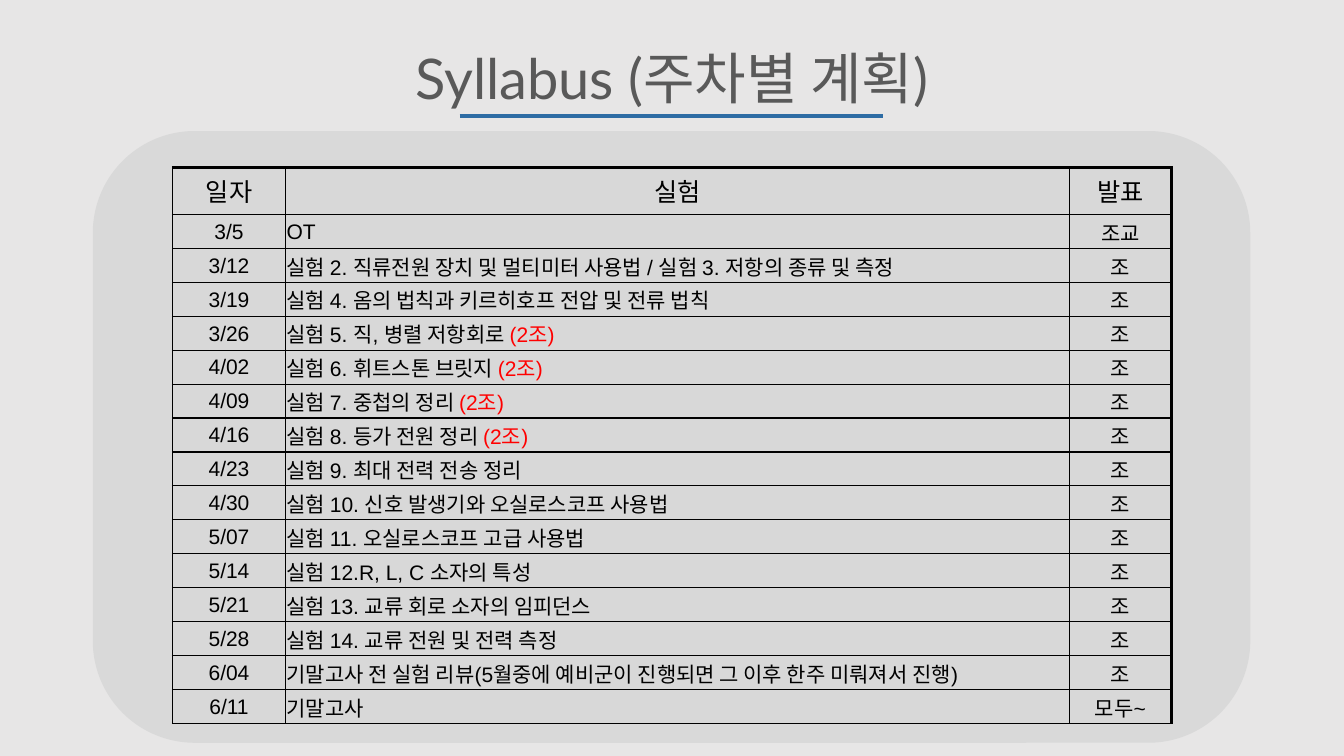
from lxml import etree
from pptx import Presentation
from pptx.dml.color import RGBColor
from pptx.enum.shapes import MSO_CONNECTOR, MSO_SHAPE
from pptx.enum.text import MSO_ANCHOR, MSO_AUTO_SIZE, PP_ALIGN
from pptx.oxml.ns import qn
from pptx.util import Pt

STRAIGHT = MSO_CONNECTOR.STRAIGHT
ROUNDED = MSO_SHAPE.ROUNDED_RECTANGLE
MIDDLE = MSO_ANCHOR.MIDDLE
FIT_SHAPE = MSO_AUTO_SIZE.SHAPE_TO_FIT_TEXT
LEFT, CENTER = PP_ALIGN.LEFT, PP_ALIGN.CENTER

BACKGROUND = RGBColor(0xE7, 0xE6, 0xE6)
PANEL = RGBColor(0xD9, 0xD9, 0xD9)
CELL = RGBColor(0xD8, 0xD8, 0xD8)
TITLE = RGBColor(0x59, 0x59, 0x59)
RULE = RGBColor(0x2E, 0x6C, 0xA4)
BLACK = RGBColor(0, 0, 0)
RED = RGBColor(0xFF, 0, 0)

HEADER = ("일자", "실험", "발표")
GROUP = "조"
GROUP_NOTE = "(2조)"
WEEKS = [
    ("3/5", "OT", "조교"),
    ("3/12", "실험 2. 직류전원 장치 및 멀티미터 사용법 / 실험 3. 저항의 종류 및 측정", GROUP),
    ("3/19", "실험 4. 옴의 법칙과 키르히호프 전압 및 전류 법칙", GROUP),
    ("3/26", "실험 5. 직, 병렬 저항회로 (2조)", GROUP),
    ("4/02", "실험 6. 휘트스톤 브릿지 (2조)", GROUP),
    ("4/09", "실험 7. 중첩의 정리 (2조)", GROUP),
    ("4/16", "실험 8. 등가 전원 정리 (2조)", GROUP),
    ("4/23", "실험 9. 최대 전력 전송 정리", GROUP),
    ("4/30", "실험 10. 신호 발생기와 오실로스코프 사용법", GROUP),
    ("5/07", "실험 11. 오실로스코프 고급 사용법", GROUP),
    ("5/14", "실험 12.R, L, C 소자의 특성", GROUP),
    ("5/21", "실험 13. 교류 회로 소자의 임피던스", GROUP),
    ("5/28", "실험 14. 교류 전원 및 전력 측정", GROUP),
    ("6/04", "기말고사 전 실험 리뷰(5월중에 예비군이 진행되면 그 이후 한주 미뤄져서 진행)", GROUP),
    ("6/11", "기말고사", "모두~"),
]


def add_text(para, text, *, size, font="Arial", color=BLACK, align=CENTER):
    para.alignment = align
    span = para.add_run()
    span.text = text
    span.font.size = Pt(size)
    span.font.name = font
    span.font.color.rgb = color


class Page:
    thin, thick = 1, 2.25
    header_size, body_size = 18, 15
    header_insets, body_insets = (5, 1.5, 5, 1.5), (0.7, 0.7, 0.7, 0)

    def __init__(self, deck):
        self.slide = deck.slides.add_slide(deck.slide_layouts[6])
        fill = self.slide.background.fill
        fill.solid()
        fill.fore_color.rgb = BACKGROUND

    def title(self, text, left, top, width, height):
        box = self.slide.shapes.add_textbox(Pt(left), Pt(top), Pt(width), Pt(height))
        frame = box.text_frame
        frame.word_wrap = False
        frame.auto_size = FIT_SHAPE
        add_text(frame.paragraphs[0], text, size=40, font="Lato", color=TITLE)

    def panel(self, left, top, width, height):
        shape = self.slide.shapes.add_shape(ROUNDED, Pt(left), Pt(top), Pt(width), Pt(height))
        shape.shadow.inherit = False
        shape.fill.solid()
        shape.fill.fore_color.rgb = PANEL
        shape.line.fill.background()

    def rule(self, left, right, top):
        line = self.slide.shapes.add_connector(STRAIGHT, Pt(left), Pt(top), Pt(right), Pt(top))
        line.line.color.rgb = RULE
        line.line.width = Pt(3)
        etree.SubElement(line._element.spPr, qn("a:effectLst"))

    def borders(self, cell, **widths):
        properties = cell._tc.get_or_add_tcPr()
        for index, side in enumerate("LRTB"):
            width = Pt(widths.get(side, self.thin))
            line = etree.Element(qn("a:ln" + side), w=str(width))
            fill = etree.SubElement(line, qn("a:solidFill"))
            etree.SubElement(fill, qn("a:srgbClr"), val=str(BLACK))
            properties.insert(index, line)

    def cell(self, cell, text, *, size, insets, align):
        cell.vertical_anchor = MIDDLE
        (cell.margin_left, cell.margin_top,
         cell.margin_right, cell.margin_bottom) = map(Pt, insets)
        cell.fill.solid()
        cell.fill.fore_color.rgb = CELL
        para = cell.text_frame.paragraphs[0]
        subject, note, _ = text.partition(GROUP_NOTE)
        add_text(para, subject, size=size, align=align)
        if note:
            add_text(para, note, size=size, color=RED, align=align)

    def schedule(self, rows, left, top, widths, header_height, row_height):
        heights = [header_height] + [row_height] * (len(rows) - 1)
        frame = self.slide.shapes.add_table(
            len(rows), len(widths), Pt(left), Pt(top), Pt(sum(widths)), Pt(sum(heights)))
        table = frame.table
        table.first_row = table.horz_banding = False
        for column, width in zip(table.columns, widths):
            column.width = Pt(width)
        last_row, last_column = len(rows) - 1, len(widths) - 1
        for row, values in enumerate(rows):
            table.rows[row].height = Pt(heights[row])
            header = row == 0
            for column, text in enumerate(values):
                cell = table.cell(row, column)
                self.cell(
                    cell, text,
                    size=self.header_size if header else self.body_size,
                    insets=self.header_insets if header else self.body_insets,
                    align=LEFT if column == 1 and not header else CENTER)
                self.borders(
                    cell,
                    T=self.thick if header else self.thin,
                    R=self.thick if column == last_column else self.thin,
                    B=1.5 if row == last_row else self.thin)


def main():
    deck = Presentation()
    deck.slide_width, deck.slide_height = Pt(960), Pt(540)
    page = Page(deck)
    page.title("Syllabus (주차별 계획)", 275.8, 27.4, 408.2, 55.4)
    page.panel(66.3, 93.6, 826.8, 437)
    page.rule(328.4, 630.7, 82.8)
    page.schedule([HEADER, *WEEKS], 123.2, 119.6, (80.8, 559.8, 73), 33.6, 24.24)
    deck.save("out.pptx")


if __name__ == "__main__":
    main()
